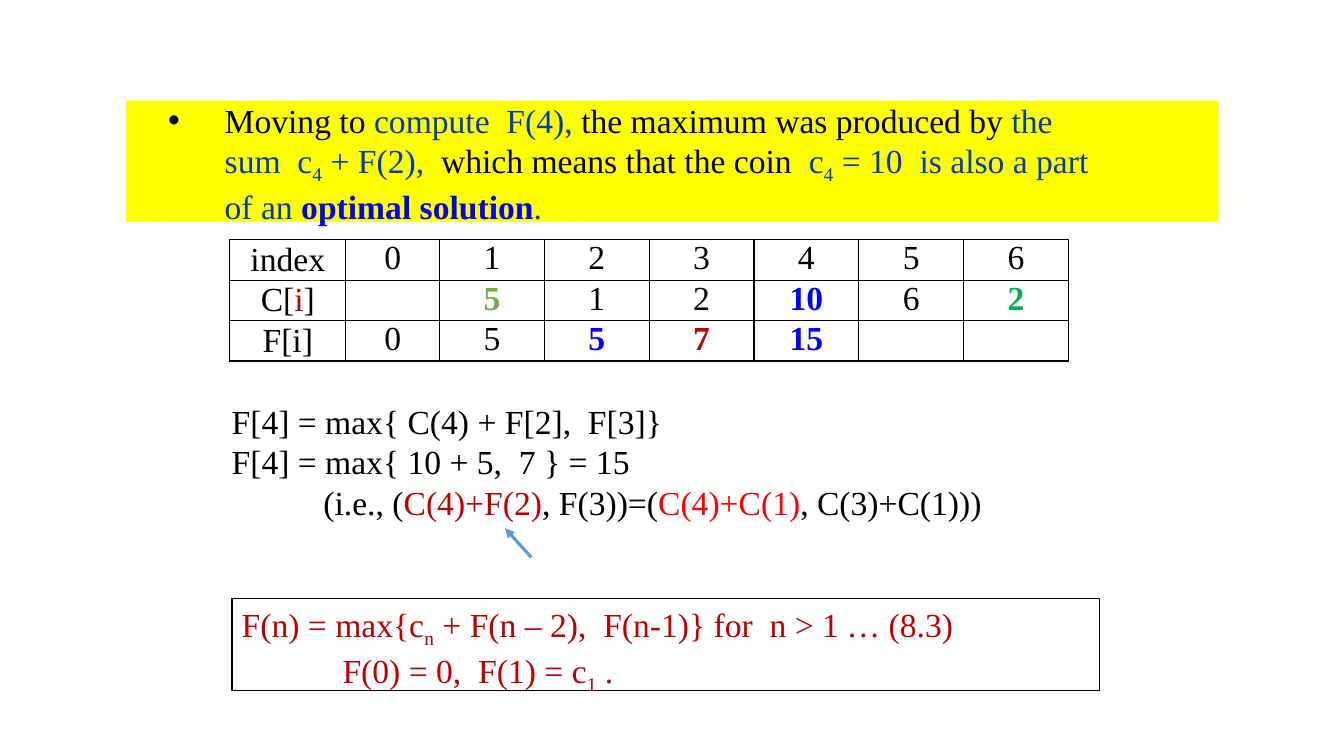
from dataclasses import dataclass
from typing import Optional

from lxml.etree import SubElement
from pptx import Presentation
from pptx.dml.color import RGBColor
from pptx.enum.shapes import MSO_CONNECTOR, MSO_SHAPE
from pptx.enum.text import MSO_ANCHOR, PP_ALIGN
from pptx.oxml.ns import qn
from pptx.util import Emu, Inches, Pt

BLACK = RGBColor(0, 0, 0)
WHITE = RGBColor(255, 255, 255)
YELLOW = RGBColor(255, 255, 0)
NAVY = RGBColor(0, 60, 180)
BLUE = RGBColor(0, 0, 255)
RED = RGBColor(255, 0, 0)
DARK_RED = RGBColor(192, 0, 0)
LIGHT_GREEN = RGBColor(112, 173, 71)
GREEN = RGBColor(0, 176, 80)
ARROW_BLUE = RGBColor(91, 155, 213)
FONT = "Times New Roman"
SIZE = Pt(24)
WIDTH, HEIGHT = Inches(13.33), Inches(7.5)


@dataclass(frozen=True)
class Run:
    text: str
    color: RGBColor = BLACK
    bold: bool = False
    sub: bool = False


@dataclass(frozen=True)
class Para:
    runs: list[Run]
    left: float = 0
    hanging: float = 0
    bullet: Optional[str] = None
    tab: Optional[float] = None


@dataclass(frozen=True)
class Area:
    left: float
    top: float
    width: float
    height: float

    def box(self) -> tuple[Emu, Emu, Emu, Emu]:
        return across(self.left), down(self.top), across(self.width), down(self.height)


def across(share: float) -> Emu:
    return Emu(round(WIDTH * share / 100))


def down(share: float) -> Emu:
    return Emu(round(HEIGHT * share / 100))


def add_runs(p, runs: list[Run]) -> None:
    for run in runs:
        r = p.add_run()
        r.text = run.text
        r.font.name, r.font.size = FONT, SIZE
        r.font.bold = run.bold
        r.font.color.rgb = run.color
        if run.sub:
            r.font._element.set("baseline", "-25000")


def write(tf, paras: list[Para]) -> None:
    tf.word_wrap = True
    tf.vertical_anchor = MSO_ANCHOR.TOP
    for i, para in enumerate(paras):
        p = tf.add_paragraph() if i else tf.paragraphs[0]
        p.alignment = PP_ALIGN.LEFT
        pPr = p._p.get_or_add_pPr()
        pPr.set("marL", str(Inches(para.left)))
        pPr.set("indent", str(-Inches(para.hanging)))
        if para.bullet:
            SubElement(pPr, qn("a:buFont"), typeface="Arial")
            SubElement(pPr, qn("a:buChar"), char=para.bullet)
        if para.tab:
            tabs = SubElement(pPr, qn("a:tabLst"))
            SubElement(tabs, qn("a:tab"), pos=str(Inches(para.tab)), algn="l")
        add_runs(p, para.runs)


def add_text(s, area: Area, paras: list[Para]) -> None:
    write(s.shapes.add_textbox(*area.box()).text_frame, paras)


def add_rect(s, area: Area, fill: RGBColor, line: Optional[RGBColor] = None):
    sp = s.shapes.add_shape(MSO_SHAPE.RECTANGLE, *area.box())
    sp.shadow.inherit = False
    sp.fill.solid()
    sp.fill.fore_color.rgb = fill
    if line is None:
        sp.line.fill.background()
    else:
        sp.line.color.rgb = line
        sp.line.width = Pt(1)
    return sp


def add_border(cell) -> None:
    tcPr = cell._tc.get_or_add_tcPr()
    for side in ("lnL", "lnR", "lnT", "lnB"):
        ln = SubElement(tcPr, qn(f"a:{side}"), w=str(Pt(1)))
        fill = SubElement(ln, qn("a:solidFill"))
        SubElement(fill, qn("a:srgbClr"), val=str(BLACK))


def add_coin_table(s, area: Area, columns: list[float], rows: list[list[list[Run]]]) -> None:
    table = s.shapes.add_table(len(rows), len(columns), *area.box()).table
    table.first_row = table.horz_banding = False
    for column, share in zip(table.columns, columns):
        column.width = across(share)
    for i, row in enumerate(rows):
        table.rows[i].height = down(area.height / len(rows))
        for j, runs in enumerate(row):
            cell = table.cell(i, j)
            cell.margin_left = cell.margin_right = Inches(0.07)
            cell.margin_top = cell.margin_bottom = 0
            cell.vertical_anchor = MSO_ANCHOR.TOP if j else MSO_ANCHOR.MIDDLE
            add_border(cell)
            cell.fill.solid()
            cell.fill.fore_color.rgb = WHITE
            p = cell.text_frame.paragraphs[0]
            p.alignment = PP_ALIGN.CENTER
            add_runs(p, runs)


def add_arrow(s, start: tuple[float, float], end: tuple[float, float]) -> None:
    cx = s.shapes.add_connector(
        MSO_CONNECTOR.STRAIGHT,
        across(start[0]), down(start[1]), across(end[0]), down(end[1]))
    cx.line.color.rgb = ARROW_BLUE
    cx.line.width = Pt(2.25)
    SubElement(cx.line._get_or_add_ln(), qn("a:tailEnd"), type="triangle")
    SubElement(cx._element.spPr, qn("a:effectLst"))


EXPLANATION = [Para([
    Run("Moving to "), Run("compute  F(4), ", NAVY),
    Run("the maximum was produced by "), Run("the sum  c", NAVY),
    Run("4", NAVY, sub=True), Run(" + F(2), ", NAVY),
    Run(" which means that the coin  "), Run("c", NAVY),
    Run("4", NAVY, sub=True), Run(" = 10  is also a part of an ", NAVY),
    Run("optimal solution", BLUE, bold=True), Run(".", NAVY),
], left=0.56, hanging=0.56, bullet="•")]

COIN_ROWS = [
    [[Run("index")]] + [[Run(str(n))] for n in range(7)],
    [[Run("C["), Run("i", DARK_RED), Run("]")], [], [Run("5", LIGHT_GREEN, True)],
     [Run("1")], [Run("2")], [Run("10", BLUE, True)], [Run("6")], [Run("2", GREEN, True)]],
    [[Run("F[i]")], [Run("0")], [Run("5")], [Run("5", BLUE, True)],
     [Run("7", DARK_RED, True)], [Run("15", BLUE, True)], [], []],
]

DERIVATION = [
    Para([Run("F[4] = max{ C(4) + F[2],  F[3]}")]),
    Para([Run("F[4] = max{ 10 + 5,  7 } = 15")]),
    Para([Run("(i.e., ("), Run("C(4)+F(2)", DARK_RED), Run(", F(3))=("),
          Run("C(4)+C(1)", RED), Run(", C(3)+C(1)))")], left=0.91),
]

RECURRENCE = [
    Para([Run("F(n) = max{c", DARK_RED), Run("n", DARK_RED, sub=True),
          Run(" + F(n – 2),  F(n-1)} for  n > 1\t… (8.3)", DARK_RED)], tab=7),
    Para([Run("F(0) = 0,  F(1) = c", DARK_RED), Run("1", DARK_RED, sub=True),
          Run(" .", DARK_RED)], left=1),
]


def main() -> None:
    prs = Presentation()
    prs.slide_width, prs.slide_height = WIDTH, HEIGHT
    s = prs.slides.add_slide(prs.slide_layouts[6])
    add_rect(s, Area(9.38, 13.33, 81.3, 16), YELLOW)
    add_text(s, Area(11.78, 12.53, 71.27, 17.47), EXPLANATION)
    add_coin_table(s, Area(17.1, 31.73, 62.41, 16), [8.63, 6.98] + [7.8] * 6, COIN_ROWS)
    add_text(s, Area(16.5, 52.4, 63.6, 17.47), DERIVATION)
    add_arrow(s, (39.53, 73.73), (37.58, 69.87))
    recurrence = add_rect(s, Area(17.25, 79.2, 64.58, 12.13), WHITE, BLACK)
    write(recurrence.text_frame, RECURRENCE)
    prs.save("out.pptx")


if __name__ == "__main__":
    main()
